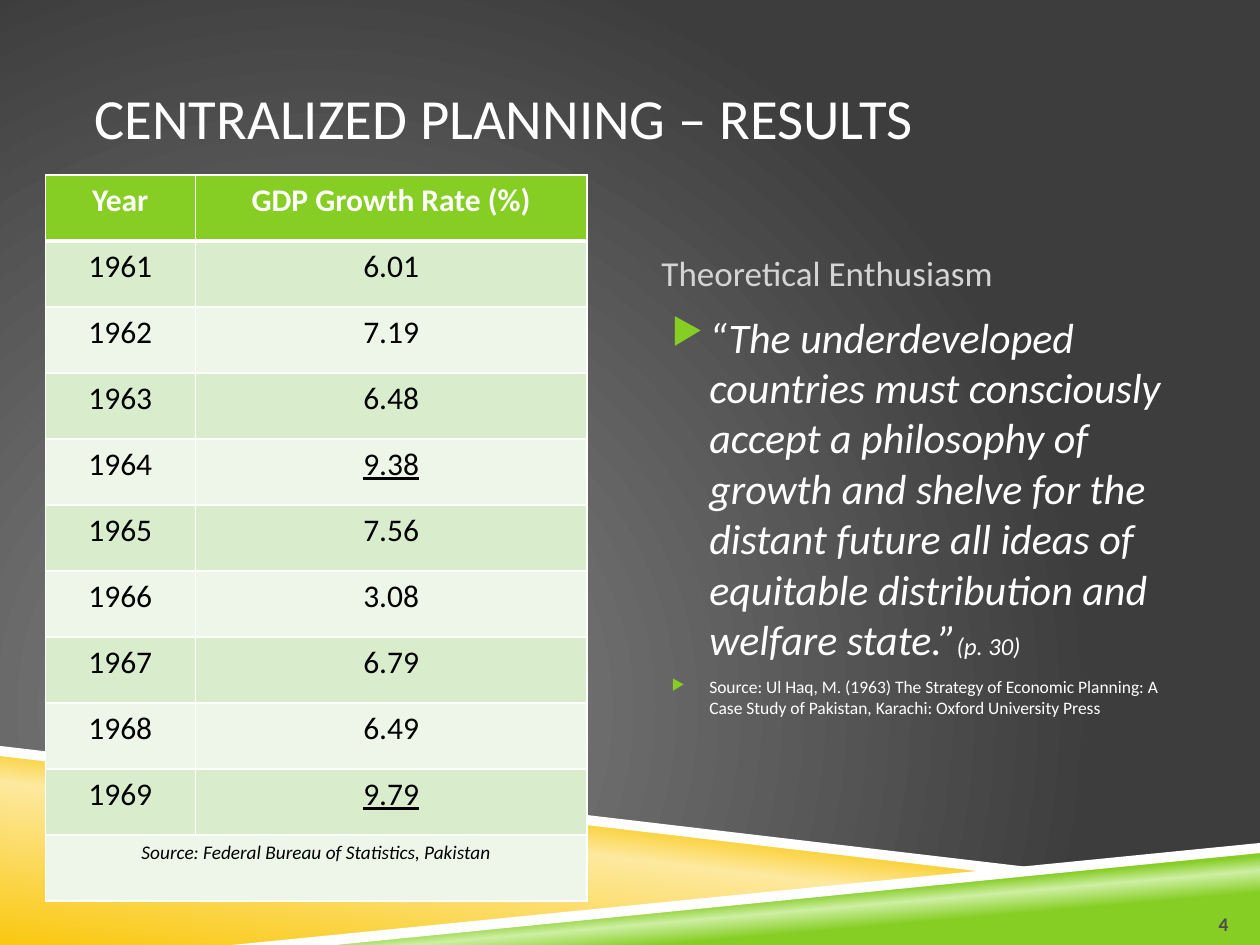
from lxml.etree import SubElement
from pptx import Presentation
from pptx.dml.color import RGBColor
from pptx.enum.text import MSO_ANCHOR, MSO_AUTO_SIZE, PP_ALIGN
from pptx.oxml import parse_xml
from pptx.oxml.ns import nsdecls, qn
from pptx.util import Inches, Pt

FONT = "Calibri"
WHITE, BLACK, GREEN = "FFFFFF", "000000", "86CE24"
BANDS = ["D9EDCD", "EDF6E8"]
GROWTH = [("1961", "6.01"), ("1962", "7.19"), ("1963", "6.48"),
          ("1964", "9.38"), ("1965", "7.56"), ("1966", "3.08"),
          ("1967", "6.79"), ("1968", "6.49"), ("1969", "9.79")]
PEAKS = ("9.38", "9.79")


def rgb(color):
    return RGBColor.from_string(color)


def style(run, size, color, bold=False, italic=False, underline=False):
    f = run.font
    f.name, f.size, f.color.rgb = FONT, Pt(size), rgb(color)
    f.bold, f.italic, f.underline = bold, italic, underline


def frame(shape, anchor, insets=(0, 0.05, 0, 0.05)):
    tf = shape.text_frame
    tf.word_wrap, tf.auto_size = True, MSO_AUTO_SIZE.NONE
    tf.vertical_anchor = anchor
    (tf.margin_left, tf.margin_top,
     tf.margin_right, tf.margin_bottom) = map(Inches, insets)
    return tf


def add_text(s, box, text, size, color, anchor, align=PP_ALIGN.LEFT,
             bold=False, insets=(0, 0.05, 0, 0.05)):
    tf = frame(s.shapes.add_textbox(*map(Inches, box)), anchor, insets)
    p = tf.paragraphs[0]
    p.text, p.alignment = text, align
    style(p.runs[0], size, color, bold)


def set_gradient(parent, stops, direction):
    """Replace the solid fill of parent with a gradient."""
    gs = "".join(f'<a:gs pos="{pos * 1000}"><a:srgbClr val="{color}"/></a:gs>'
                 for pos, color in stops)
    solid = parent.find(qn("a:solidFill"))
    parent.replace(solid, parse_xml(
        f'<a:gradFill {nsdecls("a")} rotWithShape="1">'
        f'<a:gsLst>{gs}</a:gsLst>{direction}</a:gradFill>'))


def add_band(s, points, color, stops=None, angle=0):
    start, *rest = [(Inches(x), Inches(y)) for x, y in points]
    fb = s.shapes.build_freeform(*start)
    fb.add_line_segments(rest, close=True)
    sp = fb.convert_to_shape()
    sp.shadow.inherit = False
    sp.line.fill.background()
    sp.fill.solid()
    sp.fill.fore_color.rgb = rgb(color)
    if stops:
        set_gradient(sp.element.spPr, stops,
                     f'<a:lin ang="{angle * 60000}" scaled="0"/>')


def add_backdrop(s, width, height):
    # Dark radial background
    s.background.fill.solid()
    set_gradient(s.element.find(".//" + qn("p:bgPr")),
                 [(0, "878787"), (100, "3D3D3D")],
                 '<a:path path="circle"><a:fillToRect l="50000" t="100000" '
                 'r="100000" b="50000"/></a:path>')
    # Green and yellow wedges, then their white edges
    add_band(s, [(1.98, height), (width, 6.72), (width, height)], GREEN,
             [(28, GREEN), (40, "CFEFA4"), (48, GREEN)], 265)
    add_band(s, [(0, 5.97), (7.92, 6.92), (2, height), (0, height)], "FAC810",
             [(0, "FAC810"), (52, "FDE99F"), (66, "FAC810")], 277)
    add_band(s, [(0, 5.92), (0, 6), (7.9, 6.93), (8.32, 6.9)], WHITE)
    add_band(s, [(width, 6.69), (1.84, height), (2.66, height),
                 (width, 6.77)], WHITE)


def add_title(s, box, text):
    title = s.shapes.title
    title.left, title.top, title.width, title.height = map(Inches, box)
    tf = frame(title, MSO_ANCHOR.MIDDLE)
    tf.text = text
    tf.paragraphs[0].alignment = PP_ALIGN.LEFT
    style(tf.paragraphs[0].runs[0], 32.4, WHITE)


def set_borders(cell, bottom):
    tcPr = cell._tc.get_or_add_tcPr()
    for i, (side, pts) in enumerate(
            [("L", 1), ("R", 1), ("T", 1), ("B", bottom)]):
        tcPr.insert(i, parse_xml(
            f'<a:ln{side} {nsdecls("a")} w="{Pt(pts)}"><a:solidFill>'
            f'<a:srgbClr val="{WHITE}"/></a:solidFill></a:ln{side}>'))


def fill_cell(cell, text, fill, size=18, color=BLACK, bottom=1, **fmt):
    cell.margin_left = cell.margin_right = Inches(0.06)
    cell.margin_top = cell.margin_bottom = Inches(0.05)
    cell.fill.solid()
    cell.fill.fore_color.rgb = rgb(fill)
    set_borders(cell, bottom)
    p = cell.text_frame.paragraphs[0]
    p.text, p.alignment = text, PP_ALIGN.CENTER
    for r in p.runs:
        style(r, size, color, **fmt)


def add_growth_table(s, box):
    left, top, width, height = map(Inches, box)
    n = len(GROWTH) + 2
    table = s.shapes.add_table(n, 2, left, top, width, height).table
    table.columns[0].width = Inches(1.19)
    table.columns[1].width = width - Inches(1.19)
    for row in table.rows:
        row.height = height // n
    # Header
    for c, text in enumerate(["Year", "GDP Growth Rate (%)"]):
        fill_cell(table.cell(0, c), text, GREEN, color=WHITE, bottom=3,
                  bold=True)
    # Years, with the peak rates underlined
    for i, record in enumerate(GROWTH):
        for c, text in enumerate(record):
            fill_cell(table.cell(i + 1, c), text, BANDS[i % 2],
                      underline=text in PEAKS)
    # Source row across both columns
    fill_cell(table.cell(n - 1, 1), "", BANDS[1])
    fill_cell(table.cell(n - 1, 0),
              "Source: Federal Bureau of Statistics, Pakistan", BANDS[1],
              size=11, italic=True)
    table.cell(n - 1, 0).merge(table.cell(n - 1, 1))


def add_bullet(p):
    pPr = p._p.get_or_add_pPr()
    pPr.set("marL", str(Inches(0.38)))
    pPr.set("indent", str(Inches(-0.3)))
    SubElement(SubElement(pPr, qn("a:buClr")), qn("a:srgbClr"), val=GREEN)
    SubElement(pPr, qn("a:buSzPct"), val="85000")
    SubElement(pPr, qn("a:buChar"), char="▶")


def add_quote(s, box):
    left, top, width, height = box
    add_text(s, (left, top, width, 0.7), "Theoretical Enthusiasm", 20,
             "D4D4D4", MSO_ANCHOR.BOTTOM)
    body = s.shapes.add_textbox(*map(Inches, (left, top + 0.74, width,
                                              height - 0.74)))
    tf = frame(body, MSO_ANCHOR.TOP)
    # Quotation with its page
    p = tf.paragraphs[0]
    p.text = ("“The underdeveloped countries must consciously accept a "
              "philosophy of growth and shelve for the distant future all "
              "ideas of equitable distribution and welfare state.”")
    add_bullet(p)
    style(p.runs[0], 24, WHITE, italic=True)
    r = p.add_run()
    r.text = "(p. 30)"
    style(r, 14, WHITE, italic=True)
    # Reference
    p = tf.add_paragraph()
    p.text = ("Source: Ul Haq, M. (1963) The Strategy of Economic Planning: "
              "A Case Study of Pakistan, Karachi: Oxford University Press")
    add_bullet(p)
    p.space_before = Pt(7)
    style(p.runs[0], 10, WHITE)


def main():
    prs = Presentation()
    prs.slide_width, prs.slide_height = Inches(10), Inches(7.5)
    s = prs.slides.add_slide(prs.slide_layouts[5])
    add_backdrop(s, 10, 7.5)
    add_title(s, (0.75, 0.3, 8.5, 1.25), "CENTRALIZED PLANNING – RESULTS")
    add_growth_table(s, (0.36, 1.39, 4.3, 5.76))
    add_quote(s, (5.25, 1.68, 4, 5.47))
    # Slide number
    add_text(s, (9.25, 7.02, 0.5, 0.4), "4", 11, "4D4D4D", MSO_ANCHOR.BOTTOM,
             PP_ALIGN.RIGHT, bold=True, insets=(0, 0.05, 0, 0))
    prs.save("out.pptx")


if __name__ == "__main__":
    main()
